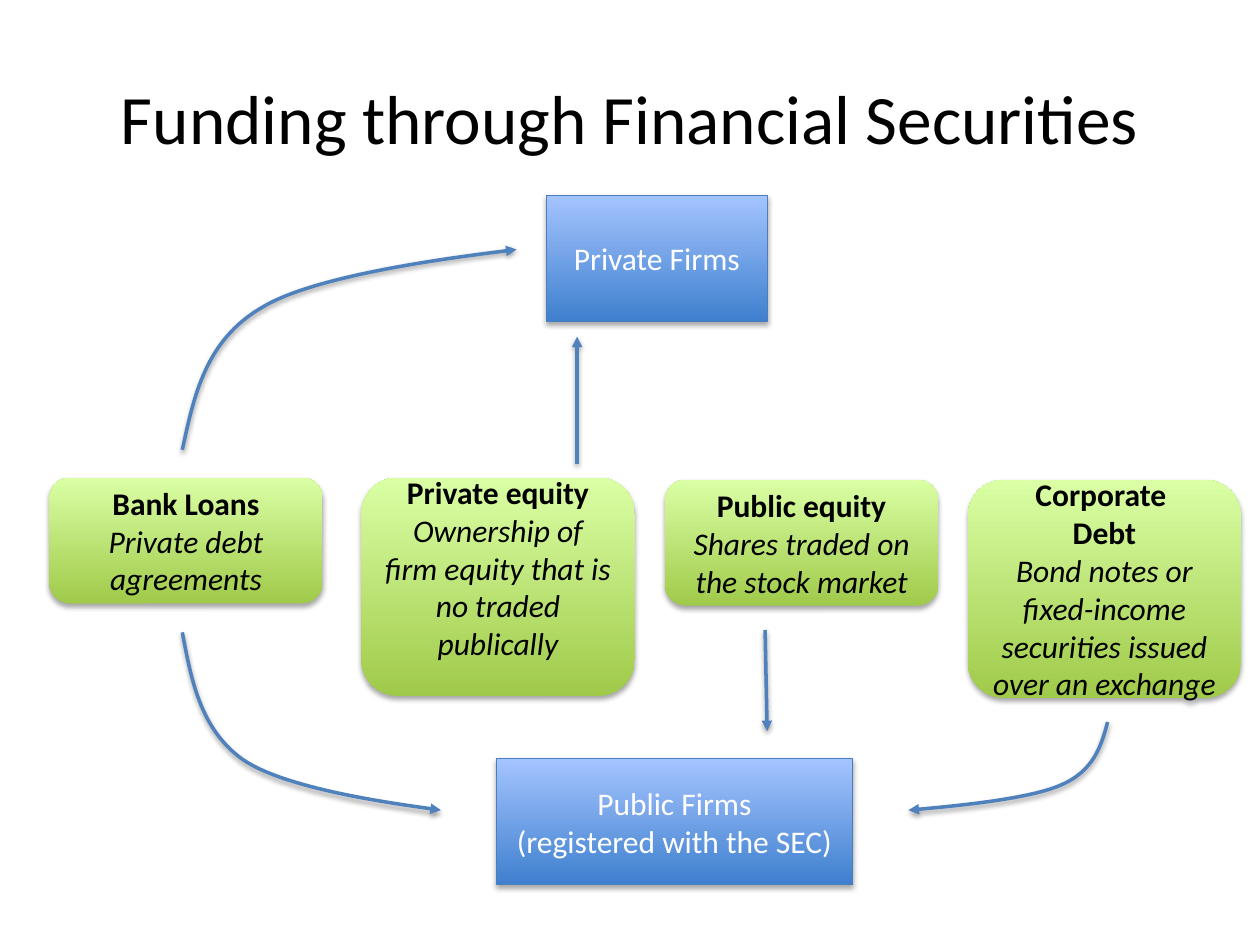
from lxml.etree import SubElement
from pptx import Presentation
from pptx.dml.color import RGBColor
from pptx.enum.shapes import MSO_CONNECTOR as Link, MSO_SHAPE as Preset
from pptx.enum.text import MSO_ANCHOR as Anchor, PP_ALIGN as Align
from pptx.oxml.ns import qn
from pptx.util import Pt

BLUE = ("3F80CE", "A4C4FF")
GREEN = ("A0CA4A", "DAFFA5")


def color(value):
    return RGBColor.from_string(value)


class Diagram:
    font = "Calibri"
    text_size = 18
    arrow_color = "4F81BD"

    def __init__(self, page):
        self.page = page

    def label(self, box, lines, ink, size=text_size, headings=0):
        frame = box.text_frame
        frame.word_wrap = True
        frame.vertical_anchor = Anchor.MIDDLE
        frame.text = "\n".join(lines)
        for index, para in enumerate(frame.paragraphs):
            para.alignment = Align.CENTER
            for span in para.runs:
                span.font.name = self.font
                span.font.size = Pt(size)
                span.font.color.rgb = color(ink)
                if headings:
                    span.font.bold = index < headings
                    span.font.italic = index >= headings

    def shadow(self, item, distance, opacity):
        effects = SubElement(item._element.spPr, qn("a:effectLst"))
        outer = SubElement(effects, qn("a:outerShdw"), blurRad=str(Pt(3.1)),
                           dist=str(Pt(distance)), dir="5400000", rotWithShape="0")
        black = SubElement(outer, qn("a:srgbClr"), val="000000")
        SubElement(black, qn("a:alpha"), val=str(opacity * 1000))

    def title(self, text, left, top, width, height):
        box = self.page.shapes.add_textbox(Pt(left), Pt(top), Pt(width), Pt(height))
        self.label(box, [text], "000000", size=39.6)

    def block(self, preset, bounds, shades, outline=None):
        box = self.page.shapes.add_shape(preset, *map(Pt, bounds))
        box.fill.gradient()
        box.fill.gradient_angle = 90
        for stop, shade in zip(box.fill.gradient_stops, shades):
            stop.color.rgb = color(shade)
        if outline:
            box.line.color.rgb = color(outline)
            box.line.width = Pt(0.75)
        else:
            box.line.fill.background()
        self.shadow(box, 1.8, 35)
        return box

    def firm(self, lines, *bounds):
        box = self.block(Preset.RECTANGLE, bounds, BLUE, "4B7EBC")
        self.label(box, lines, "FFFFFF")

    def security(self, heading, detail, left, top, height, bottom_inset=3.6):
        box = self.block(Preset.ROUNDED_RECTANGLE, (left, top, 156.25, height), GREEN)
        box.text_frame.margin_bottom = Pt(bottom_inset)
        self.label(box, [*heading, detail], "000000", headings=len(heading))

    def finish_arrow(self, item):
        item.line.color.rgb = color(self.arrow_color)
        item.line.width = Pt(2)
        outline = item._element.spPr.find(qn("a:ln"))
        SubElement(outline, qn("a:tailEnd"), type="triangle")
        self.shadow(item, 1.6, 38)

    def arrow(self, *ends):
        self.finish_arrow(self.page.shapes.add_connector(Link.STRAIGHT, *map(Pt, ends)))

    def curve(self, start, *controls):
        points = [(Pt(x), Pt(y)) for x, y in controls]
        builder = self.page.shapes.build_freeform(Pt(start[0]), Pt(start[1]))
        builder.add_line_segments(points, close=False)
        shape = builder.convert_to_shape()
        shape.fill.background()
        outline = shape._element.find(".//" + qn("a:path"))
        segments = outline.findall(qn("a:lnTo"))
        for first in range(0, len(segments), 3):
            bend = SubElement(outline, qn("a:cubicBezTo"))
            for segment in segments[first:first + 3]:
                bend.append(segment[0])
                outline.remove(segment)
        self.finish_arrow(shape)


def main():
    deck = Presentation()
    deck.slide_width, deck.slide_height = Pt(720), Pt(540)
    diagram = Diagram(deck.slides.add_slide(deck.slide_layouts[6]))

    diagram.title("Funding through Financial Securities", 36, 21.6, 648, 90)
    diagram.firm(["Private Firms"], 312.3, 111.6, 126.2, 72)
    diagram.firm(["Public Firms", "(registered with the SEC)"], 283.6, 433.6, 203.6, 72)

    diagram.security(["Bank Loans"], "Private debt agreements", 28.2, 272.9, 72)
    diagram.security(["Private equity"],
                     "Ownership of firm equity that is no traded publically",
                     206.5, 272.9, 124.8, bottom_inset=25.6)
    diagram.security(["Public equity"], "Shares traded on the stock market",
                     380, 274.1, 72)
    diagram.security(["Corporate ", "Debt"],
                     "Bond notes or fixed-income securities issued over an exchange",
                     553, 274.1, 124.8)

    diagram.arrow(437.2, 360, 438.4, 417.8)
    diagram.arrow(329.8, 265, 329.8, 192.4)
    diagram.curve((104.2, 257), (110.9, 226.1), (117.4, 194.4), (149.8, 175.7),
                  (181.4, 156.2), (295.2, 142.6), (295.2, 142.6))
    diagram.curve((104.2, 361.4), (109.4, 388.8), (114.5, 416.9), (139, 434.2),
                  (164.2, 451.4), (252, 463), (252, 463))
    diagram.curve((632.9, 412.6), (629.3, 426.2), (625, 440.6), (606.2, 448.6),
                  (586.8, 457.2), (519.1, 463), (519.1, 463))
    deck.save("out.pptx")


if __name__ == "__main__":
    main()
